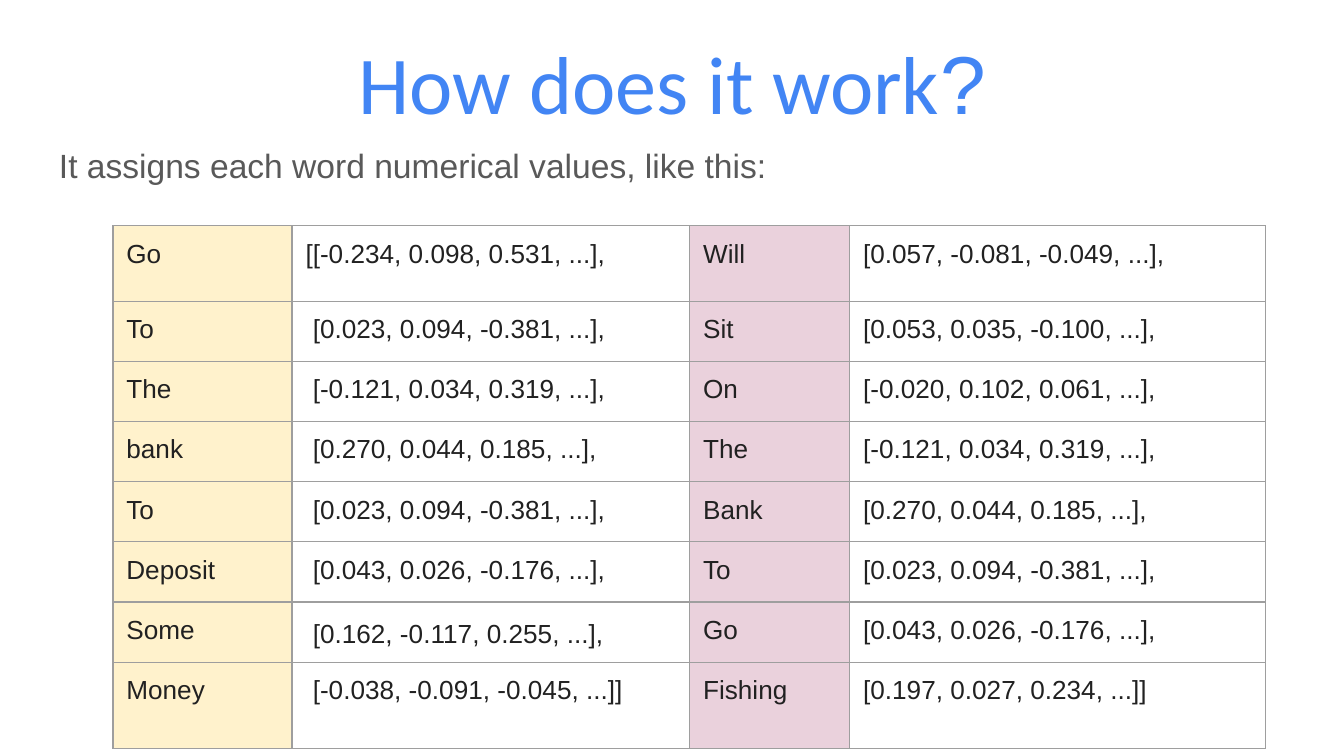
from dataclasses import dataclass

from lxml.etree import SubElement
from pptx import Presentation
from pptx.dml.color import RGBColor
from pptx.enum.text import MSO_ANCHOR, MSO_AUTO_SIZE, PP_ALIGN
from pptx.oxml.ns import qn
from pptx.util import Pt

# Content
TITLE = [("How does it work", "Calibri"), ("?", "Arial")]
INTRO = "It assigns each word numerical values, like this:"
ROWS = [
    ("Go", "[[-0.234, 0.098, 0.531, ...],", "Will", "[0.057, -0.081, -0.049, ...],"),
    ("To", " [0.023, 0.094, -0.381, ...],", "Sit", "[0.053, 0.035, -0.100, ...],"),
    ("The", " [-0.121, 0.034, 0.319, ...],", "On", "[-0.020, 0.102, 0.061, ...],"),
    ("bank", " [0.270, 0.044, 0.185, ...],", "The", "[-0.121, 0.034, 0.319, ...],"),
    ("To", " [0.023, 0.094, -0.381, ...],", "Bank", "[0.270, 0.044, 0.185, ...],"),
    ("Deposit", " [0.043, 0.026, -0.176, ...],", "To", "[0.023, 0.094, -0.381, ...],"),
    ("Some", " [0.162, -0.117, 0.255, ...],", "Go", "[0.043, 0.026, -0.176, ...],"),
    ("Money", " [-0.038, -0.091, -0.045, ...]]", "Fishing", "[0.197, 0.027, 0.234, ...]]"),
]
LOOSE = {(6, 1): 1.15}  # line spacing of single cells


@dataclass(frozen=True)
class Theme:
    title: str = "4285F4"
    intro: str = "595959"
    cell: str = "212121"
    rule: str = "9E9E9E"
    fills: tuple = ("FFF2CC", None, "EAD1DC", None)
    big: int = 44
    mid: int = 18
    small: int = 14
    font: str = "Arial"
    pad: float = 7.2


THEME = Theme()

# Sizes in points
WIDE, HIGH = 720, 405
LEFT, SPAN = 24.5, 671
COLS = (96, 213, 85.7, 223)
TALL = [40.6] + [32.2] * (len(ROWS) - 2) + [46]


def put(frame, runs, size, color, align=PP_ALIGN.LEFT, line=None, after=None):
    """Write one paragraph; runs is text or a list of (text, font)."""
    if isinstance(runs, str):
        runs = [(runs, THEME.font)]
    para = frame.paragraphs[0]
    para.alignment = align
    if line:
        para.line_spacing = line
    if after is not None:
        para.space_after = Pt(after)
    for text, font in runs:
        run = para.add_run()
        run.text = text
        run.font.name = font
        run.font.size = Pt(size)
        run.font.color.rgb = RGBColor.from_string(color)


def inset(part):
    part.margin_left = part.margin_right = Pt(THEME.pad)
    part.margin_top = part.margin_bottom = Pt(THEME.pad)


def frame_of(shape, anchor):
    frame = shape.text_frame
    frame.word_wrap = True
    frame.auto_size = MSO_AUTO_SIZE.NONE
    frame.vertical_anchor = anchor
    inset(frame)
    return frame


def edge(cell):
    """Draw the four borders, which come before the fill in the XML."""
    props = cell._tc.get_or_add_tcPr()
    for side in ("lnL", "lnR", "lnT", "lnB"):
        line = SubElement(props, qn(f"a:{side}"), w=str(Pt(0.75)))
        fill = SubElement(line, qn("a:solidFill"))
        SubElement(fill, qn("a:srgbClr"), val=THEME.rule)


deck = Presentation()
deck.slide_width, deck.slide_height = Pt(WIDE), Pt(HIGH)
slide = deck.slides.add_slide(deck.slide_layouts[5])

# Title
title = slide.shapes.title
title.left, title.top, title.width, title.height = map(Pt, (LEFT, 17.5, SPAN, 45))
put(frame_of(title, MSO_ANCHOR.MIDDLE), TITLE, THEME.big, THEME.title,
    align=PP_ALIGN.CENTER, line=1.15, after=12)

# Intro
intro = slide.shapes.add_textbox(*map(Pt, (LEFT, 67.5, SPAN, 269)))
put(frame_of(intro, MSO_ANCHOR.TOP), INTRO, THEME.mid, THEME.intro, line=1.15)

# Table of words and values
table = slide.shapes.add_table(
    len(ROWS), len(COLS), *map(Pt, (60.5, 121, sum(COLS), sum(TALL)))).table
table.first_row = table.horz_banding = False
for col, width in zip(table.columns, COLS):
    col.width = Pt(width)
for r, (row, words) in enumerate(zip(table.rows, ROWS)):
    row.height = Pt(TALL[r])
    for c, (cell, word, fill) in enumerate(zip(row.cells, words, THEME.fills)):
        inset(cell)
        edge(cell)
        if fill:
            cell.fill.solid()
            cell.fill.fore_color.rgb = RGBColor.from_string(fill)
        else:
            cell.fill.background()
        put(cell.text_frame, word, THEME.small, THEME.cell, line=LOOSE.get((r, c)))

deck.save("out.pptx")
